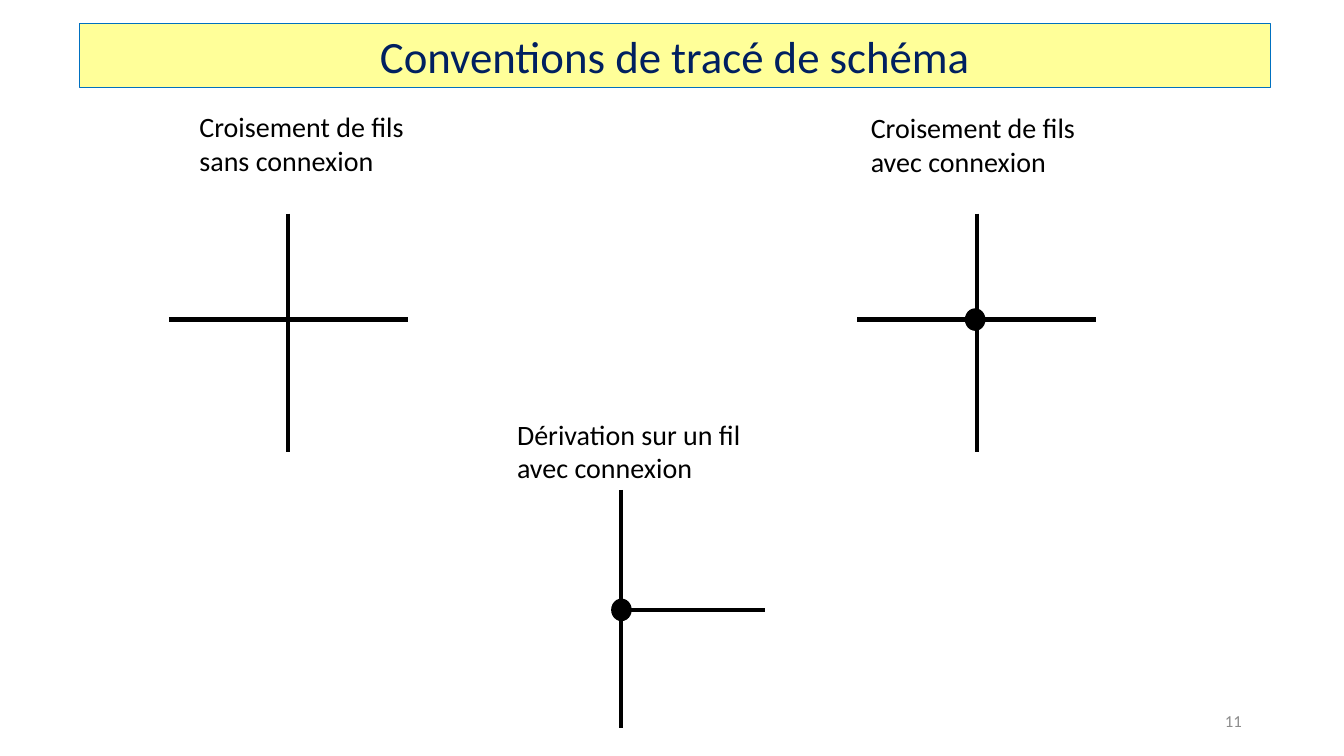
"""Build the slide on wiring diagram conventions; lengths are percent of the slide."""
from dataclasses import dataclass

from lxml import etree
from pptx import Presentation
from pptx.dml.color import RGBColor
from pptx.enum.shapes import MSO_CONNECTOR, MSO_SHAPE
from pptx.enum.text import MSO_ANCHOR, MSO_AUTO_SIZE, PP_ALIGN
from pptx.oxml.ns import qn
from pptx.util import Inches, Pt

STRAIGHT = MSO_CONNECTOR.STRAIGHT
ELLIPSE = MSO_SHAPE.OVAL
TOP, MIDDLE = MSO_ANCHOR.TOP, MSO_ANCHOR.MIDDLE
LEFT, CENTER, RIGHT = PP_ALIGN.LEFT, PP_ALIGN.CENTER, PP_ALIGN.RIGHT
NO_FIT = MSO_AUTO_SIZE.NONE
TITLE_ONLY = 5

TITLE = "Conventions de tracé de schéma"
TITLE_BOX = (5.93, 3.07, 88.58, 8.53)
PAGE_NUMBER = "11"
PAGE_NUMBER_BOX = (70.65, 92.67, 22.5, 5.33)
DIAGRAMS = [
    {"caption": ["Croisement de fils", "sans connexion"], "box": (14.1, 13.87, 19.8, 10.27),
     "column": 21.45, "top": 28.27, "row": 42.27, "reach": (-8.89, 8.89), "dot": None},
    {"caption": ["Croisement de fils", "avec connexion"], "box": (64.05, 14, 22.35, 10.27),
     "column": 72.68, "top": 28.27, "row": 42.27, "reach": (-8.89, 8.89), "dot": 72.56},
    {"caption": ["Dérivation sur un fil", "avec connexion"], "box": (37.73, 54.53, 22.35, 10.27),
     "column": 46.2, "top": 64.8, "row": 80.67, "reach": (0.15, 10.73), "dot": 46.24},
]
WIRE_HEIGHT = 31.53
DOT_WIDTH, DOT_HEIGHT = 1.43, 2.8


@dataclass(frozen=True)
class Theme:
    """Colours, font and sizes of the slide."""
    font: str = "Calibri"
    ink: RGBColor = RGBColor(0, 0, 0)
    title_ink: RGBColor = RGBColor(0x00, 0x20, 0x60)
    title_fill: RGBColor = RGBColor(0xFF, 0xFF, 0x00)
    title_line: RGBColor = RGBColor(0x00, 0x70, 0xC0)
    title_opacity: int = 40
    number_ink: RGBColor = RGBColor(0x8C, 0x8C, 0x8C)
    title_size: int = 32
    caption_size: int = 20
    number_size: int = 12
    wire_width: float = 3
    dot_line: float = 1
    title_line_width: float = 0.75


THEME = Theme()
deck = Presentation()
deck.slide_width, deck.slide_height = Inches(13.33), Inches(7.5)
page = deck.slides.add_slide(deck.slide_layouts[TITLE_ONLY])


def across(share):
    """Turn a share of the width into a length."""
    return round(deck.slide_width * share / 100)


def down(share):
    """Turn a share of the height into a length."""
    return round(deck.slide_height * share / 100)


def place(box):
    """Turn a box in shares into lengths."""
    left, top, width, height = box
    return across(left), down(top), across(width), down(height)


def write(shape, lines, size, color, align=LEFT, anchor=TOP):
    """Fill a shape with one paragraph per line."""
    frame = shape.text_frame
    frame.word_wrap = True
    frame.auto_size = NO_FIT
    frame.vertical_anchor = anchor
    for index, line in enumerate(lines):
        para = frame.add_paragraph() if index else frame.paragraphs[0]
        para.alignment = align
        span = para.add_run()
        span.text = line
        span.font.name = THEME.font
        span.font.size = Pt(size)
        span.font.color.rgb = color


def paint(shape, fill, line, width):
    """Give a shape its fill and outline."""
    shape.fill.solid()
    shape.fill.fore_color.rgb = fill
    shape.line.color.rgb = line
    shape.line.width = Pt(width)


def add_title():
    """Format the title placeholder as a translucent banner."""
    title = page.shapes.title
    title.left, title.top, title.width, title.height = place(TITLE_BOX)
    paint(title, THEME.title_fill, THEME.title_line, THEME.title_line_width)
    color = title._element.spPr.find(qn("a:solidFill"))[0]
    etree.SubElement(color, qn("a:alpha")).set("val", str(THEME.title_opacity * 1000))
    write(title, [TITLE], THEME.title_size, THEME.title_ink, CENTER, MIDDLE)


def add_wire(start, end):
    """Draw a straight wire between two points."""
    wire = page.shapes.add_connector(
        STRAIGHT, across(start[0]), down(start[1]), across(end[0]), down(end[1]))
    wire.line.color.rgb = THEME.ink
    wire.line.width = Pt(THEME.wire_width)
    etree.SubElement(wire._element.spPr, qn("a:effectLst"))


def add_diagram(diagram):
    """Draw a caption, its two wires and the connection dot."""
    caption = page.shapes.add_textbox(*place(diagram["box"]))
    write(caption, diagram["caption"], THEME.caption_size, THEME.ink)
    column, row, top = diagram["column"], diagram["row"], diagram["top"]
    start, end = diagram["reach"]
    add_wire((column, top), (column, top + WIRE_HEIGHT))
    add_wire((column + start, row), (column + end, row))
    if diagram["dot"] is not None:
        box = (diagram["dot"] - DOT_WIDTH / 2, row - DOT_HEIGHT / 2, DOT_WIDTH, DOT_HEIGHT)
        dot = page.shapes.add_shape(ELLIPSE, *place(box))
        dot.shadow.inherit = False
        paint(dot, THEME.ink, THEME.ink, THEME.dot_line)


def main():
    """Build and save the slide."""
    add_title()
    number = page.shapes.add_textbox(*place(PAGE_NUMBER_BOX))
    write(number, [PAGE_NUMBER], THEME.number_size, THEME.number_ink, RIGHT, MIDDLE)
    for diagram in DIAGRAMS:
        add_diagram(diagram)
    deck.save("out.pptx")


if __name__ == "__main__":
    main()
